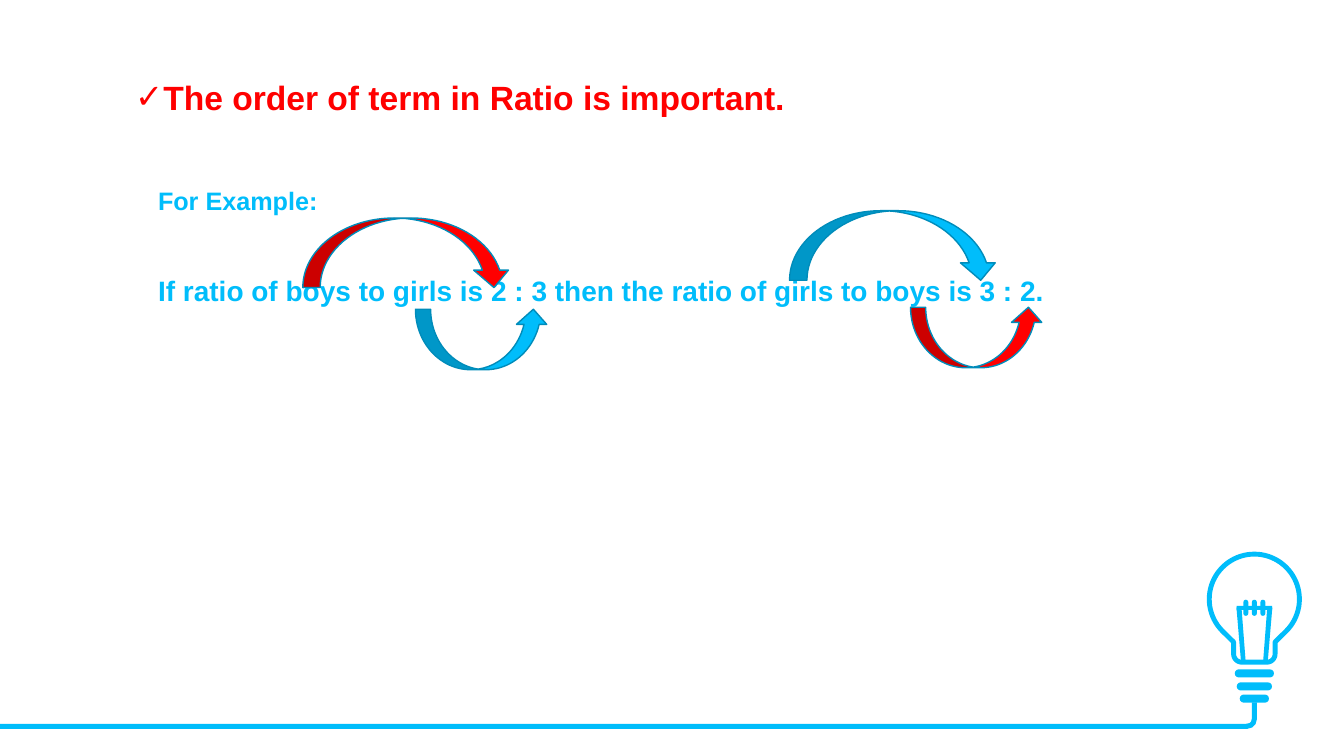
from math import cos, radians, sin

from pptx import Presentation
from pptx.dml.color import RGBColor
from pptx.enum.shapes import MSO_SHAPE as Preset
from pptx.enum.text import MSO_ANCHOR, MSO_AUTO_SIZE, PP_ALIGN
from pptx.oxml.ns import qn
from pptx.util import Pt
from lxml.etree import SubElement

# Content
COLORS = {"red": "FF0000", "blue": "00BDFB", "edge": "008CBA", "white": "FFFFFF"}
FONT = "Arial"
TITLE = "The order of term in Ratio is important."
TITLE_BOX = (89.3, 51.1, 821.5, 36)
BULLET, BULLET_INDENT = "✓", 20
EXAMPLE_BOX = (105.8, 128.9, 699.8, 118.8)
EXAMPLE = [  # text, size, space before
    ("For Example:", 18, 0),
    ("If ratio of boys to girls is 2 : 3 then the ratio of girls to boys is 3 : 2.", 20, 41.4),
]
DOWN, UP = Preset.CURVED_DOWN_ARROW, Preset.CURVED_UP_ARROW
ARROWS = [  # preset, color, box
    (DOWN, "red", (216.3, 155.7, 149, 49.7)),
    (UP, "blue", (296.8, 220.9, 95, 43.2)),
    (DOWN, "blue", (564, 150.5, 149, 49.7)),
    (UP, "red", (650.4, 219.5, 95, 43.2)),
]

# Light bulb measures
BULB_X, BULB_Y, BULB_RADIUS = 896, 428, 32.2
NECK_HALF, NECK_TOP, NECK_BOTTOM, NECK_CORNER = 14.8, 458.6, 473, 5.8
THREADS = [(28, 478.1), (25.2, 487.4), (20.9, 496.1)]  # width, top
THREAD_HEIGHT = 5.8
COIL_GAP, COIL_WIDTH, COIL_TOP, COIL_HEIGHT = 6.1, 3.5, 428.4, 11.5
FILAMENT_LEG = [(12.8, 434), (9.5, 473), (6.2, 473), (9.2, 434)]  # offset, y
WIRE = 3.6
WIRE_TOP = 517
BEND = 13.7

presentation = Presentation()
presentation.slide_width, presentation.slide_height = Pt(960), Pt(540)
slide = presentation.slides.add_slide(presentation.slide_layouts[5])
shapes = slide.shapes


def color(name):
    return RGBColor.from_string(COLORS[name])


def paint(shape, fill, line=None, width=1):
    shape.shadow.inherit = False
    shape.fill.solid()
    shape.fill.fore_color.rgb = color(fill)
    if line:
        shape.line.color.rgb = color(line)
        shape.line.width = Pt(width)
    else:
        shape.line.fill.background()
    return shape


def add_preset(preset, box, fill, line=None):
    return paint(shapes.add_shape(preset, *map(Pt, box)), fill, line)


def add_outline(points, fill, line=None, width=1):
    start, *rest = [(Pt(x), Pt(y)) for x, y in points]
    builder = shapes.build_freeform(*start)
    builder.add_line_segments(rest, close=True)
    return paint(builder.convert_to_shape(), fill, line, width)


def arc(x, y, radius, start, end, steps):
    angles = [radians(start + (end - start) * i / steps) for i in range(steps + 1)]
    return [(x + radius * cos(a), y + radius * sin(a)) for a in angles]


def add_centered(preset, x, top, width, height):
    return add_preset(preset, (x - width / 2, top, width, height), "blue")


def format_text(paragraph, size, name):
    font = paragraph.runs[0].font
    font.name, font.size, font.bold = FONT, Pt(size), True
    font.color.rgb = color(name)


# Bulb glass and neck
corner_x = NECK_HALF - NECK_CORNER
corner_y = NECK_BOTTOM - NECK_CORNER
glass = (
    arc(BULB_X, BULB_Y, BULB_RADIUS, 45, -225, 60)
    + [(BULB_X - NECK_HALF, NECK_TOP)]
    + arc(BULB_X - corner_x, corner_y, NECK_CORNER, 180, 90, 8)
    + arc(BULB_X + corner_x, corner_y, NECK_CORNER, 90, 0, 8)
    + [(BULB_X + NECK_HALF, NECK_TOP)]
)
add_outline(glass, "white", "blue", 3.5)

# Screw threads
for width, top in THREADS:
    thread = add_centered(Preset.ROUNDED_RECTANGLE, BULB_X, top, width, THREAD_HEIGHT)
    thread.adjustments[0] = 0.5

# Filament
for side in (-1, 1):
    add_outline([(BULB_X + side * dx, y) for dx, y in FILAMENT_LEG], "blue")
    add_centered
for step in (-1, 0, 1):
    coil = add_centered(Preset.ROUNDED_RECTANGLE, BULB_X + step * COIL_GAP,
                        COIL_TOP, COIL_WIDTH, COIL_HEIGHT)
    coil.adjustments[0] = 0.5
add_centered(Preset.RECTANGLE, BULB_X, 432.7, 25.4, 2.9)

# Wire: floor line, bend and stem
bend_left = BULB_X + WIRE / 2 - BEND
bend_top = WIRE_TOP + WIRE - BEND
add_preset(Preset.RECTANGLE, (0, WIRE_TOP, bend_left + BEND / 2, WIRE), "blue")
add_centered(Preset.RECTANGLE, BULB_X, 501.8, WIRE, 12.2)
bend = add_preset(Preset.BLOCK_ARC, (bend_left, bend_top, BEND, BEND), "blue")
for index, value in enumerate((213.39, 60.92, 0.27)):
    bend.adjustments[index] = value

# Title
title = shapes.title
title.left, title.top, title.width, title.height = map(Pt, TITLE_BOX)
frame = title.text_frame
frame.text = TITLE
frame.word_wrap = True
frame.auto_size = MSO_AUTO_SIZE.NONE
frame.vertical_anchor = MSO_ANCHOR.TOP
paragraph = frame.paragraphs[0]
paragraph.alignment = PP_ALIGN.LEFT
properties = paragraph._p.get_or_add_pPr()
properties.set("marL", str(Pt(BULLET_INDENT)))
properties.set("indent", str(-Pt(BULLET_INDENT)))
SubElement(properties, qn("a:buFont")).set("typeface", FONT)
SubElement(properties, qn("a:buChar")).set("char", BULLET)
format_text(paragraph, 24, "red")

# Example
frame = shapes.add_textbox(*map(Pt, EXAMPLE_BOX)).text_frame
frame.word_wrap = True
frame.text = "\n".join(text for text, _, _ in EXAMPLE)
for paragraph, (_, size, before) in zip(frame.paragraphs, EXAMPLE):
    if before:
        paragraph.space_before = Pt(before)
    format_text(paragraph, size, "blue")

# Arrows linking each word to its number
for preset, fill, box in ARROWS:
    add_preset(preset, box, fill, "edge")

presentation.save("out.pptx")
